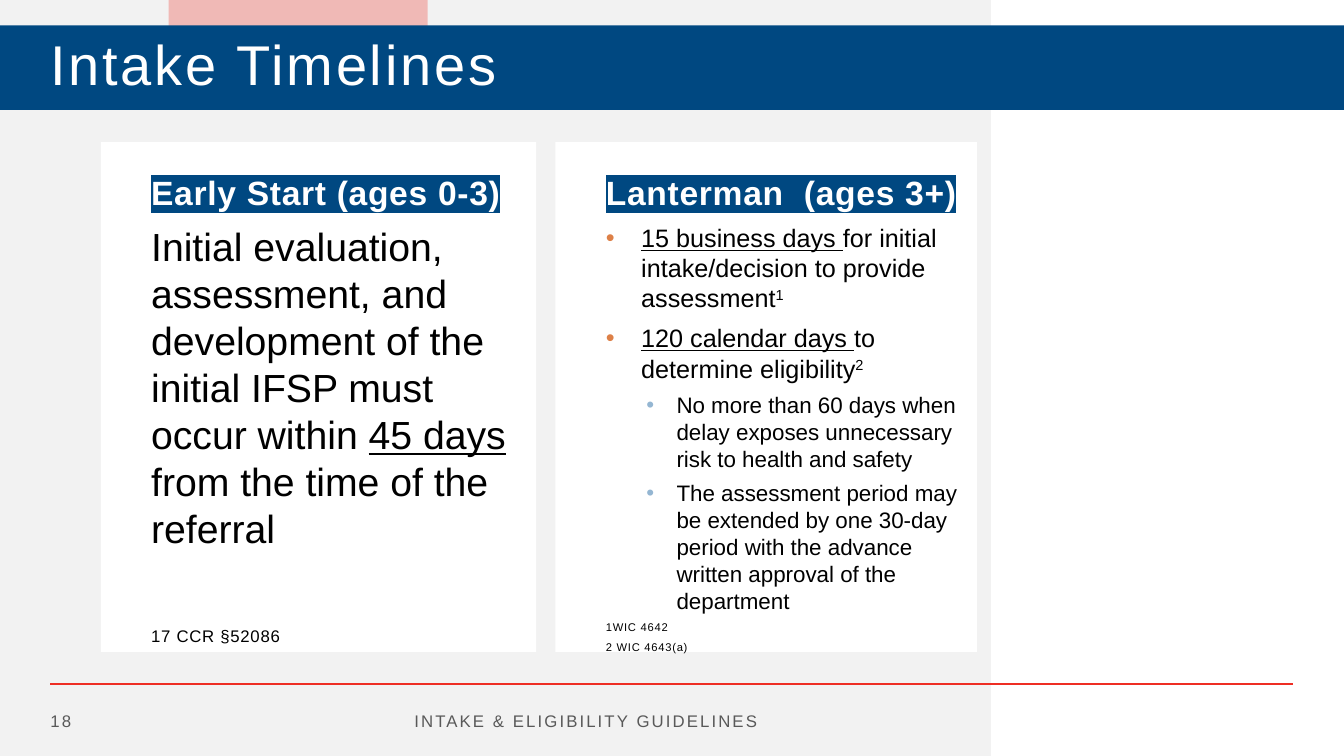
from dataclasses import dataclass

from lxml import etree
from pptx import Presentation
from pptx.dml.color import RGBColor
from pptx.enum import shapes, text
from pptx.oxml import ns
from pptx.util import Cm, Pt


# Theme: colours, type sizes in points
@dataclass(frozen=True)
class Theme:
    font: str = "Arial"
    navy: str = "004881"
    red: str = "EE2E24"
    white: str = "FFFFFF"
    black: str = "000000"
    panel: str = "F2F2F2"
    grey: str = "595959"
    orange: str = "DD8047"
    blue: str = "94B6D2"
    title: float = 40
    heading: float = 24
    lead: float = 28
    bullet: float = 18
    sub_bullet: float = 16
    small: float = 12
    note: float = 8


THEME = Theme()


@dataclass(frozen=True)
class Run:
    text: str
    underline: bool = False
    superscript: bool = False


@dataclass(frozen=True)
class Para:
    runs: tuple[Run, ...]
    size: float
    before: float = 0
    line: float | None = None
    color: str = THEME.black
    bold: bool = False
    spacing: float = 0
    highlight: str | None = None
    level: int = 0
    bullet: str | None = None
    margin: float = 0
    hang: float = 0
    align: text.PP_ALIGN = text.PP_ALIGN.LEFT


@dataclass(frozen=True)
class Box:
    left: float
    top: float
    width: float
    height: float


def heading(words: str) -> Para:
    return Para((Run(words),), THEME.heading, line=1.5, color=THEME.white,
                bold=True, spacing=0.5, highlight=THEME.navy)


def bullet(*runs: Run) -> Para:
    return Para(runs, THEME.bullet, before=7, bullet=THEME.orange, margin=0.89, hang=0.89)


def sub_bullet(words: str) -> Para:
    return Para((Run(words),), THEME.sub_bullet, before=5.5, level=1,
                bullet=THEME.blue, margin=1.78, hang=0.76)


def note(words: str) -> Para:
    return Para((Run(words),), THEME.note, line=1.5, spacing=0.5)


def footer(words: str, align: text.PP_ALIGN) -> Para:
    return Para((Run(words),), THEME.small, color=THEME.grey, spacing=1.5, align=align)


# Content
CARDS = (
    (Box(2.54, 3.58, 10.97, 12.85), (
        heading("Early Start (ages 0-3)"),
        Para((Run("Initial evaluation, assessment, and development of the initial "
                  "IFSP must occur within "),
              Run("45 days ", underline=True),
              Run("from the time of the referral")), THEME.lead, before=7),
        Para((Run("17 CCR §52086"),), THEME.small, before=53, spacing=0.5),
    )),
    (Box(14, 3.58, 10.62, 12.85), (
        heading("Lanterman  (ages 3+)"),
        bullet(Run("15 business days ", underline=True),
               Run("for initial intake/decision to provide assessment"),
               Run("1", superscript=True)),
        bullet(Run("120 calendar days ", underline=True),
               Run("to determine eligibility"),
               Run("2", superscript=True)),
        sub_bullet("No more than 60 days when delay exposes unnecessary risk to "
                   "health and safety"),
        sub_bullet("The assessment period may be extended by one 30-day period with "
                   "the advance written approval of the department"),
        note("1WIC 4642"),
        note("2 WIC 4643(a)"),
    )),
)
FOOTERS = (
    (Box(2.54, 17.65, 24.46, 1.02),
     footer("INTAKE & ELIGIBILITY GUIDELINES", text.PP_ALIGN.CENTER)),
    (Box(1.27, 17.65, 1.27, 1.02), footer("18", text.PP_ALIGN.LEFT)),
)


# Drawing helpers
def rgb(color: str) -> RGBColor:
    return RGBColor.from_string(color)


def place(sp, box: Box) -> None:
    sp.left, sp.top = Cm(box.left), Cm(box.top)
    sp.width, sp.height = Cm(box.width), Cm(box.height)


def add_rect(slide, box: Box, color: str):
    sp = slide.shapes.add_shape(shapes.MSO_SHAPE.RECTANGLE, 0, 0, 0, 0)
    place(sp, box)
    sp.shadow.inherit = False
    sp.fill.solid()
    sp.fill.fore_color.rgb = rgb(color)
    sp.line.fill.background()
    return sp


def set_frame(tf, left: float, top: float, right: float, anchor: text.MSO_ANCHOR) -> None:
    tf.word_wrap = True
    tf.auto_size = text.MSO_AUTO_SIZE.NONE
    tf.vertical_anchor = anchor
    tf.margin_left, tf.margin_top, tf.margin_right = Cm(left), Cm(top), Cm(right)
    tf.margin_bottom = 0


def add_bullet(p, color: str, margin: float, hang: float) -> None:
    ppr = p._p.get_or_add_pPr()
    ppr.set("marL", str(Cm(margin)))
    ppr.set("indent", str(-Cm(hang)))
    bu_clr = etree.SubElement(ppr, ns.qn("a:buClr"))
    etree.SubElement(bu_clr, ns.qn("a:srgbClr"), val=color)
    etree.SubElement(ppr, ns.qn("a:buFont"), typeface=THEME.font)
    etree.SubElement(ppr, ns.qn("a:buChar"), char="•")


def write(tf, paras: tuple[Para, ...]) -> None:
    for i, para in enumerate(paras):
        p = tf.add_paragraph() if i else tf.paragraphs[0]
        p.alignment, p.level = para.align, para.level
        p.space_before, p.space_after = Pt(para.before), Pt(0)
        if para.line:
            p.line_spacing = para.line
        if para.bullet:
            add_bullet(p, para.bullet, para.margin, para.hang)
        for run in para.runs:
            r = p.add_run()
            r.text = run.text
            r.font.name, r.font.size = THEME.font, Pt(para.size)
            r.font.bold, r.font.underline = para.bold, run.underline
            r.font.color.rgb = rgb(para.color)
            rpr = r.font._element
            rpr.set("spc", str(int(para.spacing * 100)))
            if run.superscript:
                rpr.set("baseline", "30000")
            if para.highlight:
                mark = etree.Element(ns.qn("a:highlight"))
                etree.SubElement(mark, ns.qn("a:srgbClr"), val=para.highlight)
                rpr.find(ns.qn("a:solidFill")).addnext(mark)


def main() -> None:
    prs = Presentation()
    prs.slide_width, prs.slide_height = Cm(33.87), Cm(19.05)
    slide = prs.slides.add_slide(prs.slide_layouts[5])

    # Backdrop: grey panel, footer rule, translucent tab
    add_rect(slide, Box(0, 0, 24.97, 19.05), THEME.panel)
    rule = slide.shapes.add_connector(shapes.MSO_CONNECTOR.STRAIGHT,
                                      Cm(1.27), Cm(17.24), Cm(32.59), Cm(17.24))
    rule.line.color.rgb, rule.line.width = rgb(THEME.red), Pt(1.5)
    etree.SubElement(rule._element.spPr, ns.qn("a:effectLst"))
    tab = add_rect(slide, Box(4.25, 0, 6.53, 2.77), THEME.red)
    tab_color = tab._element.spPr.find(".//" + ns.qn("a:srgbClr"))
    etree.SubElement(tab_color, ns.qn("a:alpha"), val="29000")

    # Title band, brought in front of the backdrop
    title = slide.shapes.title
    slide.shapes._spTree.append(title._element)
    place(title, Box(0, 0.64, 33.87, 2.13))
    title.fill.solid()
    title.fill.fore_color.rgb = rgb(THEME.navy)
    set_frame(title.text_frame, 1.27, 0, 0.64, text.MSO_ANCHOR.MIDDLE)
    write(title.text_frame, (Para((Run("Intake Timelines"),), THEME.title, line=0.9,
                                  color=THEME.white, spacing=2),))

    # Cards and footer
    for box, paras in CARDS:
        card = add_rect(slide, box, THEME.white)
        set_frame(card.text_frame, 1.27, 0.25, 0, text.MSO_ANCHOR.TOP)
        write(card.text_frame, paras)
    for box, para in FOOTERS:
        sp = slide.shapes.add_textbox(0, 0, 0, 0)
        place(sp, box)
        set_frame(sp.text_frame, 0, 0, 0, text.MSO_ANCHOR.MIDDLE)
        write(sp.text_frame, (para,))


    prs.save("out.pptx")


if __name__ == "__main__":
    main()
